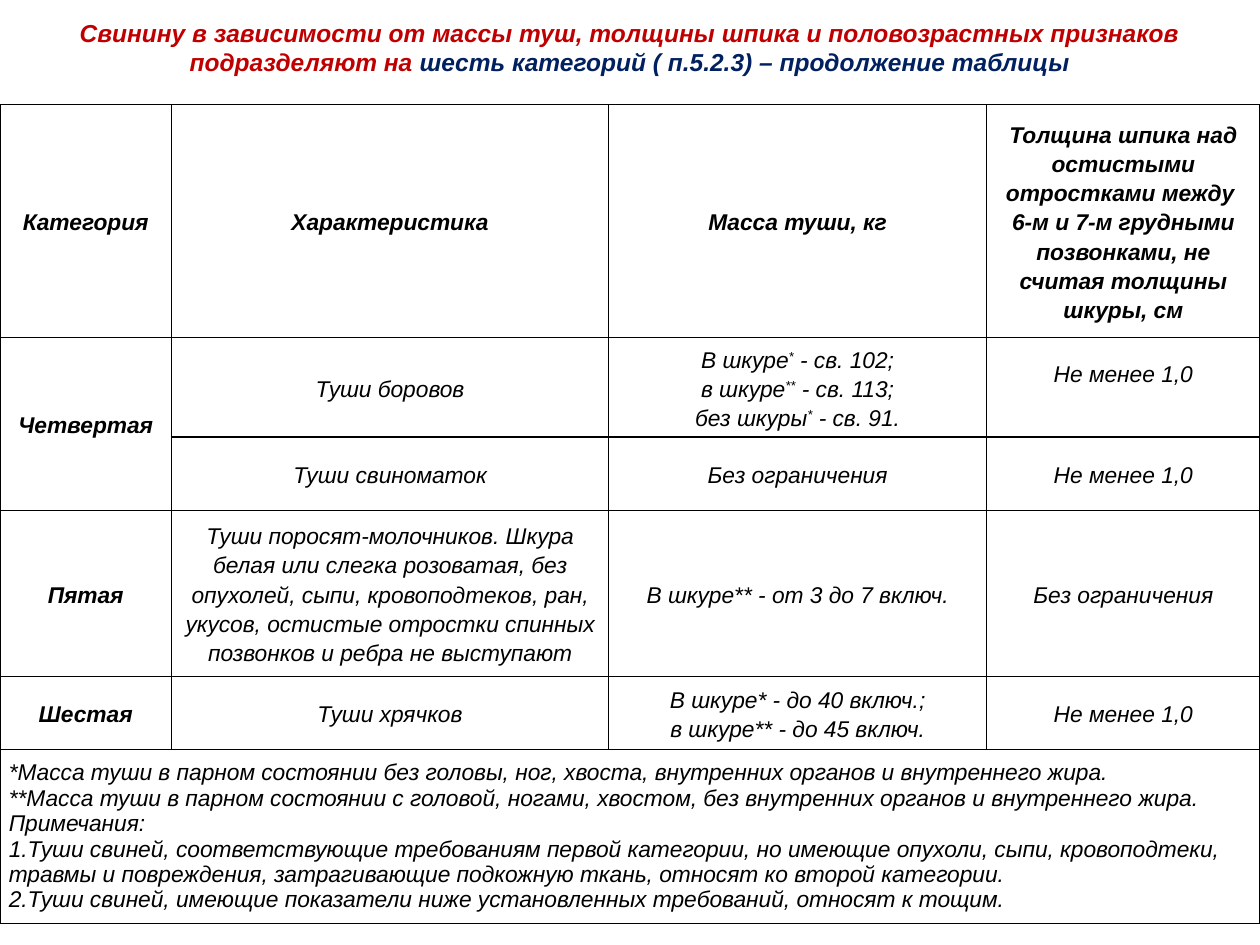
"""Build the slide with the continued table of pork categories."""
from dataclasses import dataclass

from lxml import etree
from pptx import Presentation
from pptx import util as u
from pptx.dml.color import RGBColor
from pptx.enum import text
from pptx.oxml import ns


@dataclass(frozen=True)
class Theme:
    font: str = "Arial"
    ink: str = "000000"
    paper: str = "FFFFFF"
    accent: str = "C00000"
    emphasis: str = "002060"
    title_size: int = 14
    table_size: int = 13
    border: float = 1
    line_spacing: float = 1.15


@dataclass(frozen=True)
class Entry:
    lines: tuple[str, ...]
    bold: bool = False
    centred: bool = True
    rows: int = 1
    columns: int = 1
    bottom: float = 0


THEME = Theme()
RAISED = "^"
COLUMNS = (1.36, 3.47, 3, 2.17)
ROWS = (1.85, 0.79, 0.58, 1.32, 0.58, 1.38)
TITLE = (
    ("Свинину в зависимости от массы туш, толщины шпика и половозрастных "
     "признаков подразделяют на ", THEME.accent),
    ("шесть категорий ( п.5.2.3) – продолжение таблицы", THEME.emphasis),
)
NOTES = (
    "*Масса туши в парном состоянии без головы, ног, хвоста, внутренних органов "
    "и внутреннего жира.",
    "**Масса туши в парном состоянии с головой, ногами, хвостом, без внутренних "
    "органов и внутреннего жира.",
    "Примечания:",
    "1.Туши свиней, соответствующие требованиям первой категории, но имеющие "
    "опухоли, сыпи, кровоподтеки, травмы и повреждения, затрагивающие подкожную "
    "ткань, относят ко второй категории.",
    "2.Туши свиней, имеющие показатели ниже установленных требований, относят к тощим.",
)
AT_LEAST = ("Не менее 1,0",)
UNLIMITED = ("Без ограничения",)
ENTRIES = (
    (Entry(("Категория",), bold=True),
     Entry(("Характеристика",), bold=True),
     Entry(("Масса туши, кг",), bold=True),
     Entry(("Толщина шпика над остистыми отростками между ",
            "6-м и 7-м грудными позвонками, не считая толщины шкуры, см"), bold=True)),
    (Entry(("Четвертая",), bold=True, rows=2),
     Entry(("Туши боровов",)),
     Entry(("В шкуре^*^ - св. 102;", "в шкуре^**^ - св. 113;",
            "без шкуры^*^ - св. 91.")),
     Entry(AT_LEAST, bottom=0.23)),
    (None, Entry(("Туши свиноматок",)), Entry(UNLIMITED), Entry(AT_LEAST)),
    (Entry(("Пятая",), bold=True),
     Entry(("Туши поросят-молочников. Шкура белая или слегка розоватая, без "
            "опухолей, сыпи, кровоподтеков, ран, укусов, остистые отростки "
            "спинных позвонков и ребра не выступают",)),
     Entry(("В шкуре** - от 3 до 7 включ.",)),
     Entry(UNLIMITED)),
    (Entry(("Шестая",), bold=True),
     Entry(("Туши хрячков",)),
     Entry(("В шкуре* - до 40 включ.;", "в шкуре** - до 45 включ.")),
     Entry(AT_LEAST)),
    (Entry(NOTES, centred=False, columns=4),),
)


def apply(target, values: dict) -> None:
    """Set each named attribute of the target."""
    for name, value in values.items():
        setattr(target, name, value)


def add_span(para, words: str, size: int, color: str, bold: bool):
    """Add an italic run to a paragraph."""
    span = para.add_run()
    span.text = words
    apply(span.font, {"name": THEME.font, "size": u.Pt(size), "bold": bold, "italic": True})
    span.font.color.rgb = RGBColor.from_string(color)
    return span


def add_title(page) -> None:
    """Fill and place the title placeholder."""
    box = page.shapes.title
    apply(box, {"left": u.Inches(0), "top": u.Inches(0.09),
                "width": u.Inches(10), "height": u.Inches(0.57)})
    apply(box.text_frame, {"word_wrap": True, "auto_size": text.MSO_AUTO_SIZE.NONE,
                           "vertical_anchor": text.MSO_ANCHOR.MIDDLE})
    para = box.text_frame.paragraphs[0]
    para.alignment = text.PP_ALIGN.CENTER
    for words, color in TITLE:
        add_span(para, words, THEME.title_size, color, True)


def style_cell(cell) -> None:
    """Give a cell its borders, fill and margins."""
    properties = cell._tc.get_or_add_tcPr()
    for side in ("lnL", "lnR", "lnT", "lnB"):
        line = etree.SubElement(properties, ns.qn(f"a:{side}"), w=str(u.Pt(THEME.border)))
        fill = etree.SubElement(line, ns.qn("a:solidFill"))
        etree.SubElement(fill, ns.qn("a:srgbClr"), val=THEME.ink)
    cell.fill.solid()
    cell.fill.fore_color.rgb = RGBColor.from_string(THEME.paper)
    apply(cell, {"margin_left": u.Inches(0.07), "margin_right": u.Inches(0.07),
                 "margin_top": u.Inches(0), "margin_bottom": u.Inches(0),
                 "vertical_anchor": text.MSO_ANCHOR.MIDDLE})


def write_entry(cell, entry: Entry) -> None:
    """Write the lines of an entry, raising the marked parts."""
    cell.margin_bottom = u.Inches(entry.bottom)
    frame = cell.text_frame
    for number, words in enumerate(entry.lines):
        para = frame.add_paragraph() if number else frame.paragraphs[0]
        if entry.centred:
            apply(para, {"alignment": text.PP_ALIGN.CENTER,
                         "line_spacing": THEME.line_spacing})
        for part, piece in enumerate(words.split(RAISED)):
            span = add_span(para, piece, THEME.table_size, THEME.ink, entry.bold)
            if part % 2:
                span._r.get_or_add_rPr().set("baseline", "30000")


def add_categories(page) -> None:
    """Add the table of categories with its notes."""
    table = page.shapes.add_table(
        len(ROWS), len(COLUMNS), u.Inches(0), u.Inches(0.83),
        u.Inches(sum(COLUMNS)), u.Inches(sum(ROWS))).table
    apply(table, {"first_row": False, "horz_banding": False})
    for column, width in zip(table.columns, COLUMNS):
        column.width = u.Inches(width)
    for row, height in zip(table.rows, ROWS):
        row.height = u.Inches(height)
    for cell in table.iter_cells():
        style_cell(cell)
    for top, entries in enumerate(ENTRIES):
        for left, entry in enumerate(entries):
            if entry is None:
                continue
            cell = table.cell(top, left)
            if entry.rows * entry.columns > 1:
                cell.merge(table.cell(top + entry.rows - 1, left + entry.columns - 1))
            write_entry(cell, entry)


def main() -> None:
    """Create and save the deck."""
    deck = Presentation()
    apply(deck, {"slide_width": u.Inches(10), "slide_height": u.Inches(7.5)})
    page = deck.slides.add_slide(deck.slide_layouts.get_by_name("Title Only"))
    add_title(page)
    add_categories(page)
    deck.save("out.pptx")


if __name__ == "__main__":
    main()
